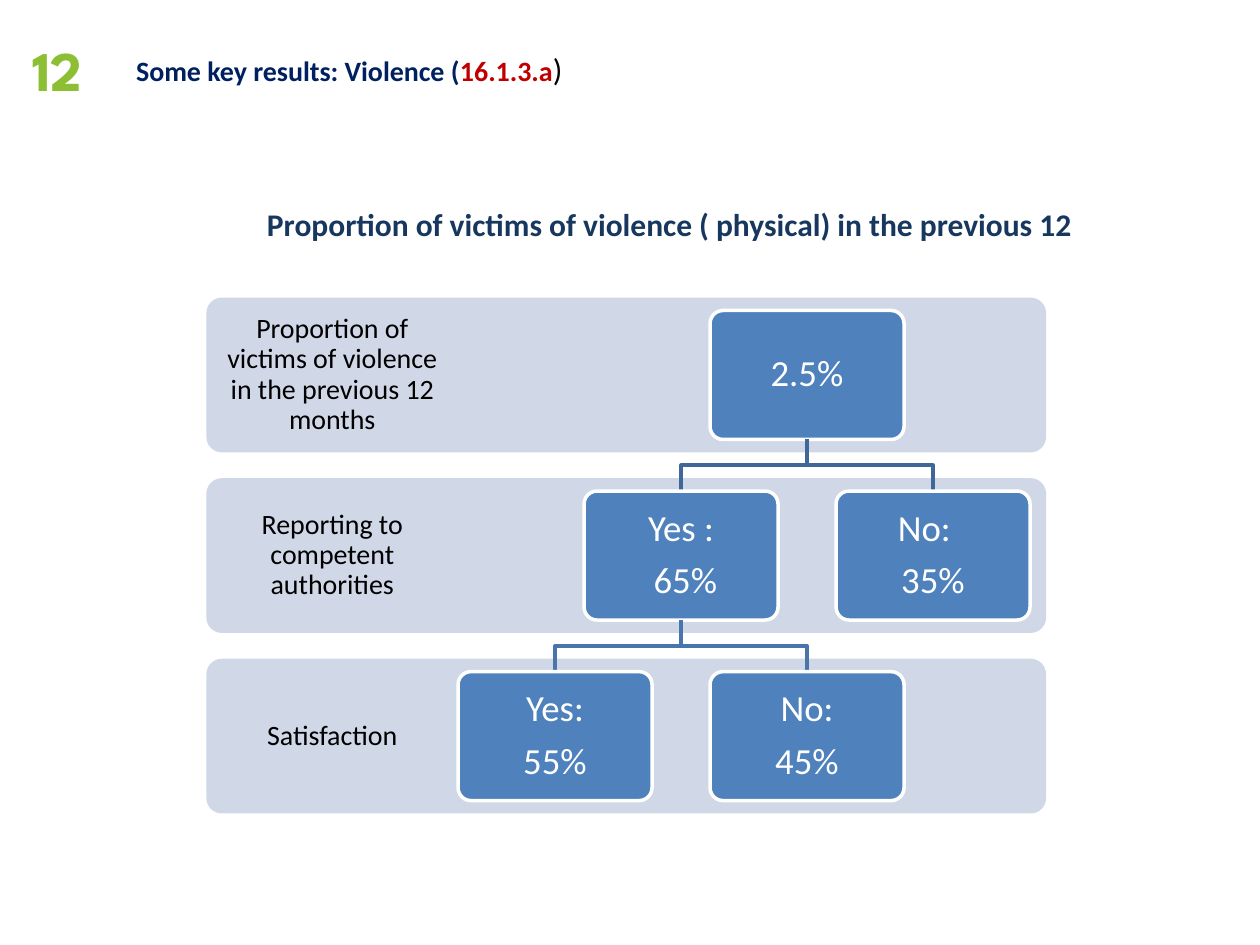
from pptx import Presentation
from pptx.dml.color import RGBColor
from pptx.enum.shapes import MSO_SHAPE
from pptx.enum.text import MSO_ANCHOR, MSO_AUTO_SIZE, PP_ALIGN
from pptx.util import Cm, Pt

ROUND = MSO_SHAPE.ROUNDED_RECTANGLE
LEFT, CENTER = PP_ALIGN.LEFT, PP_ALIGN.CENTER
TOP, MIDDLE = MSO_ANCHOR.TOP, MSO_ANCHOR.MIDDLE

NAVY = RGBColor(0x00, 0x20, 0x60)
RED = RGBColor(0xC0, 0x00, 0x00)
LIME = RGBColor(0x8C, 0xBF, 0x34)
INK = RGBColor(0x17, 0x37, 0x5E)
PALE = RGBColor(0xD0, 0xD8, 0xE8)
BLUE = RGBColor(0x4F, 0x81, 0xBD)
LINKS = [RGBColor(0x3F, 0x67, 0x97), RGBColor(0x48, 0x75, 0xAC)]
BLACK = RGBColor(0, 0, 0)
WHITE = RGBColor(255, 255, 255)

TITLE = [
    ("Some key results: Violence (", {"color": NAVY}),
    ("16.1.3.a", {"color": RED}),
    (")", {"size": 18, "bold": False}),
]
NUMBER = "12"
HEAD = "Proportion of victims of violence ( physical) in the previous 12"
LABELS = [
    "Proportion of victims of violence in the previous 12 months",
    "Reporting to competent authorities",
    "Satisfaction",
]
# name: (row, column, parent, [(line, shift in points)])
NODES = {
    "rate": (0, 2, None, [("2.5%", 0)]),
    "told": (1, 1, "rate", [("Yes :", 0), ("65%", 5)]),
    "untold": (1, 3, "rate", [("No:", -10), ("35%", 10)]),
    "pleased": (2, 0, "told", [("Yes:", 0), ("55%", 0)]),
    "upset": (2, 2, "told", [("No:", 0), ("45%", 0)]),
}

# Lengths in centimetres
BAND_X, BAND_Y, BAND_W, BAND_H = 4.16, 6, 16.93, 3.12
ROW = 3.64
LABEL_W = 5.08
NODE_W, NODE_H = 3.91, 2.6
COL_X, COL = 11.19, 2.54


def write(shape, lines, size=16, color=BLACK, bold=False, font="Calibri",
          align=CENTER, anchor=TOP, inset=None, space=None):
    """Fill a shape with lines, each a (text or runs, sideways shift) pair."""
    frame = shape.text_frame
    frame.word_wrap = True
    frame.auto_size = MSO_AUTO_SIZE.NONE
    frame.vertical_anchor = anchor
    if inset is not None:
        frame.margin_left = frame.margin_right = Cm(inset)
        frame.margin_top = frame.margin_bottom = Cm(inset)
    for i, (text, shift) in enumerate(lines):
        para = frame.add_paragraph() if i else frame.paragraphs[0]
        para.alignment = align
        if space is not None:
            para.line_spacing = 0.9
            para.space_after = Pt(space)
        if shift:
            side = "marL" if shift > 0 else "marR"
            para._p.get_or_add_pPr().set(side, str(Pt(abs(shift))))
        runs = [(text, {})] if isinstance(text, str) else text
        for words, style in runs:
            run = para.add_run()
            run.text = words
            run.font.name = font
            run.font.size = Pt(style.get("size", size))
            run.font.bold = style.get("bold", bold)
            run.font.color.rgb = style.get("color", color)


def add_text(slide, box, text, **style):
    shape = slide.shapes.add_textbox(*map(Cm, box))
    write(shape, [(text, 0)], **style)


def add_round(slide, box, fill, edge=None):
    shape = slide.shapes.add_shape(ROUND, *map(Cm, box))
    shape.shadow.inherit = False
    shape.adjustments[0] = 0.1
    shape.fill.solid()
    shape.fill.fore_color.rgb = fill
    if edge is None:
        shape.line.fill.background()
    else:
        shape.line.color.rgb = edge
        shape.line.width = Pt(2)
    return shape


def add_link(slide, start, end, color):
    """Draw a stepped line from a parent's bottom to a child's top."""
    (x1, y1), (x2, y2) = start, end
    mid = (y1 + y2) / 2
    points = [(Cm(x), Cm(y)) for x, y in [(x1, mid), (x2, mid), (x2, y2)]]
    form = slide.shapes.build_freeform(Cm(x1), Cm(y1))
    form.add_line_segments(points, close=False)
    shape = form.convert_to_shape()
    shape.shadow.inherit = False
    shape.fill.background()
    shape.line.color.rgb = color
    shape.line.width = Pt(2)


def place(name):
    """Give a node's centre x and top y."""
    row, col = NODES[name][:2]
    return COL_X + col * COL, BAND_Y + row * ROW + (BAND_H - NODE_H) / 2


def main():
    deck = Presentation()
    deck.slide_width, deck.slide_height = Cm(25.4), Cm(19.05)
    slide = deck.slides.add_slide(deck.slide_layouts[5])

    title = slide.shapes.title
    title.left, title.top = Cm(2.49), Cm(0.89)
    title.width, title.height = Cm(14.3), Cm(1.02)
    write(title, [(TITLE, 0)], bold=True, align=LEFT)
    add_text(slide, (0.4, 0.59, 1.78, 1.62), NUMBER, size=32, color=LIME,
             bold=True, font="League Spartan", align=LEFT)
    add_text(slide, (3.5, 4, 20, 1.02), HEAD, size=18, color=INK, bold=True)

    for row, label in enumerate(LABELS):
        y = BAND_Y + row * ROW
        add_round(slide, (BAND_X, y, BAND_W, BAND_H), PALE)
        add_text(slide, (BAND_X, y, LABEL_W, BAND_H), label,
                 anchor=MIDDLE, inset=0.3, space=5.6)

    for name, (row, col, parent, lines) in NODES.items():
        x, y = place(name)
        if parent:
            up_x, up_y = place(parent)
            add_link(slide, (up_x, up_y + NODE_H), (x, y), LINKS[row - 1])
        node = add_round(slide, (x - NODE_W / 2, y, NODE_W, NODE_H), BLUE, WHITE)
        write(node, lines, size=21, color=WHITE, anchor=MIDDLE,
              inset=0.3, space=7.35)

    deck.save("out.pptx")


if __name__ == "__main__":
    main()
